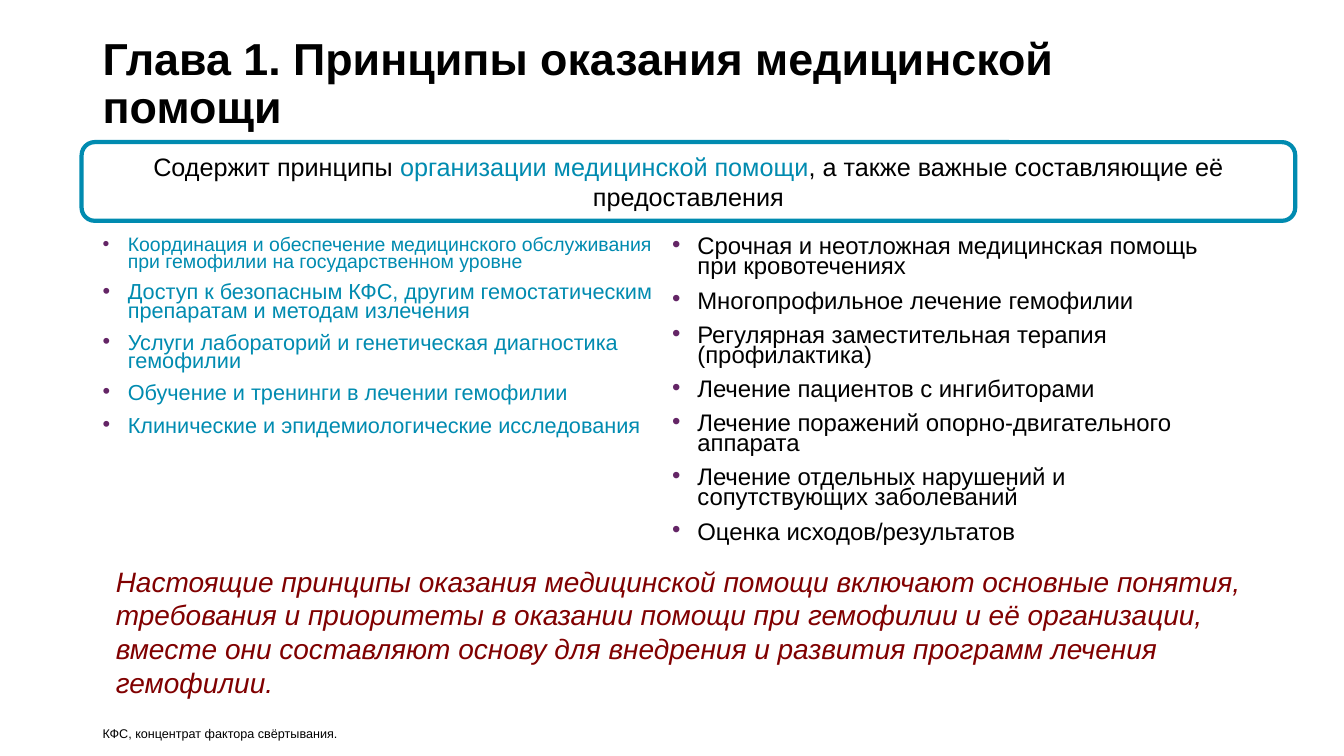
from pptx import Presentation
from pptx.dml.color import RGBColor
from pptx.enum.shapes import MSO_SHAPE as SHAPE
from pptx.enum.text import MSO_ANCHOR as ANCHOR, PP_ALIGN as ALIGN
from pptx.oxml import parse_xml
from pptx.oxml.ns import nsdecls
from pptx.util import Pt

TEAL, BLACK, MAROON, PURPLE, WHITE = "008BB0", "000000", "800000", "642566", "FFFFFF"


def rgb(value):
    return RGBColor.from_string(value)


def add_run(p, text, size, color, **font):
    r = p.add_run()
    r.text = text
    r.font.color.rgb = rgb(color)
    for name, value in {"name": "Arial", "size": Pt(size), **font}.items():
        setattr(r.font, name, value)


prs = Presentation()
prs.slide_width, prs.slide_height = Pt(960), Pt(540)
s = prs.slides.add_slide(prs.slide_layouts[6])

# Title and footnote
for text, top, height, size, bold, anchor, bottom in [
    ("Глава 1. Принципы оказания медицинской помощи", 18, 85.7, 32, True, ANCHOR.MIDDLE, 3.6),
    ("КФС, концентрат фактора свёртывания.", 500.4, 28.8, 9, False, ANCHOR.BOTTOM, 0),
]:
    sp = s.shapes.add_textbox(Pt(66.24), Pt(top), Pt(828 if bold else 781.2), Pt(height))
    tf = sp.text_frame
    for name, value in {"word_wrap": True, "vertical_anchor": anchor,
                        "margin_bottom": Pt(bottom)}.items():
        setattr(tf, name, value)
    p = tf.paragraphs[0]
    p.line_spacing = 0.9
    add_run(p, text, size, BLACK, bold=bold)

# Two bulleted columns
left_items = [
    ("Координация и обеспечение медицинского обслуживания при гемофилии на государственном уровне", 13.9),
    ("Доступ к безопасным КФС, другим гемостатическим препаратам и методам излечения", 15.5),
    ("Услуги лабораторий и генетическая диагностика гемофилии", 15.5),
    ("Обучение и тренинги в лечении гемофилии", 15.5),
    ("Клинические и эпидемиологические исследования", 15.5),
]
right_items = [(text, 17.1) for text in (
    "Срочная и неотложная медицинская помощь при кровотечениях",
    "Многопрофильное лечение гемофилии",
    "Регулярная заместительная терапия (профилактика)",
    "Лечение пациентов с ингибиторами",
    "Лечение поражений опорно-двигательного аппарата",
    "Лечение отдельных нарушений и сопутствующих заболеваний",
    "Оценка исходов/результатов",
)]
for left, width, color, items in [(66.24, 421.2, TEAL, left_items),
                                  (473.04, 414, BLACK, right_items)]:
    sp = s.shapes.add_textbox(Pt(left), Pt(167), Pt(width), Pt(247.7))
    tf = sp.text_frame
    tf.word_wrap = True
    for i, (text, size) in enumerate(items):
        p = tf.add_paragraph() if i else tf.paragraphs[0]
        p.line_spacing = 0.7
        p.space_before = Pt(10 if i else 0)
        pPr = p._p.get_or_add_pPr()
        pPr.set("marL", str(Pt(18)))
        pPr.set("indent", str(-Pt(18)))
        for xml in (f'<a:buClr {nsdecls("a")}><a:srgbClr val="{PURPLE}"/></a:buClr>',
                    f'<a:buFont {nsdecls("a")} typeface="Arial"/>',
                    f'<a:buChar {nsdecls("a")} char="•"/>'):
            pPr.append(parse_xml(xml))
        add_run(p, text, size, color)

# Conclusion and framed summary
conclusion = [(
    "Настоящие принципы оказания медицинской помощи включают основные понятия, "
    "требования и приоритеты в оказании помощи при гемофилии и её организации, "
    "вместе они составляют основу для внедрения и развития программ лечения гемофилии.", MAROON)]
summary = [
    ("Содержит принципы ", BLACK),
    ("организации медицинской помощи", TEAL),
    (", а также важные составляющие её предоставления", BLACK),
]
for kind, box, line, weight, align, size, italic, runs in [
    (SHAPE.RECTANGLE, (75.6, 398.9, 838.8, 104.4), WHITE, 1.5, ALIGN.LEFT, 20, True, conclusion),
    (SHAPE.ROUNDED_RECTANGLE, (58.3, 101.5, 866.9, 56.2), TEAL, 3, ALIGN.CENTER, 18, False, summary),
]:
    sp = s.shapes.add_shape(kind, *map(Pt, box))
    sp.shadow.inherit = False
    sp.fill.background()
    sp.line.color.rgb = rgb(line)
    sp.line.width = Pt(weight)
    tf = sp.text_frame
    tf.word_wrap = True
    tf.vertical_anchor = ANCHOR.MIDDLE
    p = tf.paragraphs[0]
    p.alignment = align
    for text, color in runs:
        add_run(p, text, size, color, italic=italic)

prs.save("out.pptx")
